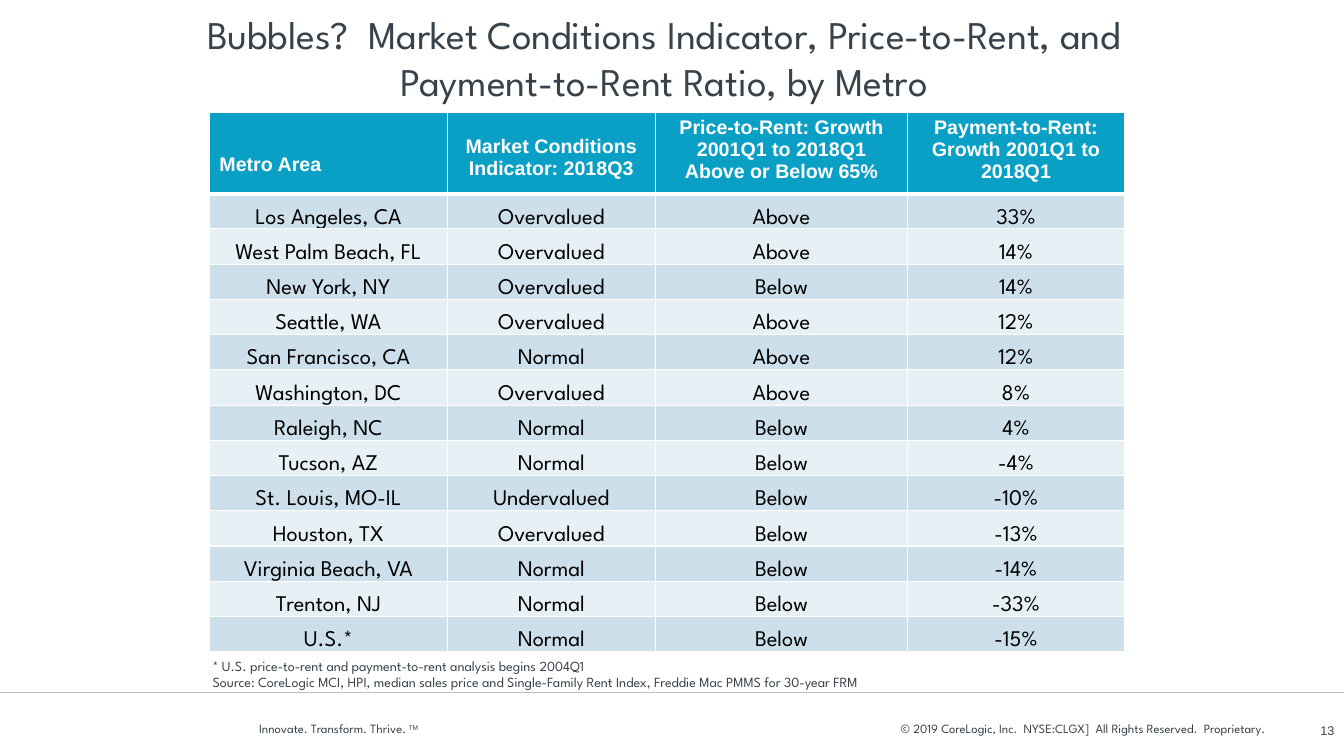
from pptx import Presentation
from pptx.util import Cm, Pt
from pptx.dml.color import RGBColor
from pptx.enum.text import PP_ALIGN, MSO_ANCHOR
from pptx.oxml.ns import qn
from lxml.etree import SubElement

HUES = {"ink": "38424A", "white": "FFFFFF", "black": "000000", "head": "0AA0C6",
        "odd": "CCDFEA", "even": "E7F0F5", "rule": "BFBFBF"}
SPARTAN = "League Spartan"
COLS = [5.99, 5.25, 6.35, 5.47]
HEAD = 2.06
LINE = 0.46
TITLES = [("Metro Area", 2), ("Market Conditions Indicator: 2018Q3", 1),
          ("Price-to-Rent: Growth 2001Q1 to 2018Q1 Above or Below 65%", 0),
          ("Payment-to-Rent: Growth 2001Q1 to 2018Q1", 0)]
METROS = [
    ("Los Angeles, CA", "Overvalued", "Above", "33%"),
    ("West Palm Beach, FL", "Overvalued", "Above", "14%"),
    ("New York, NY", "Overvalued", "Below", "14%"),
    ("Seattle, WA", "Overvalued", "Above", "12%"),
    ("San Francisco, CA", "Normal", "Above", "12%"),
    ("Washington, DC", "Overvalued", "Above", "8%"),
    ("Raleigh, NC", "Normal", "Below", "4%"),
    ("Tucson, AZ", "Normal", "Below", "-4%"),
    ("St. Louis, MO-IL", "Undervalued", "Below", "-10%"),
    ("Houston, TX", "Overvalued", "Below", "-13%"),
    ("Virginia Beach, VA", "Normal", "Below", "-14%"),
    ("Trenton, NJ", "Normal", "Below", "-33%"),
    ("U.S.*", "Normal", "Below", "-15%"),
]


def color(name):
    return RGBColor.from_string(HUES[name])


def apply(item, values):
    for key, value in values.items():
        setattr(item, key, value)


def margins(left, top, right, bottom):
    sides = {"left": left, "top": top, "right": right, "bottom": bottom}
    return {f"margin_{side}": Cm(size) for side, size in sides.items()}


def write(para, text, size, hue="ink", face=SPARTAN, bold=False, align=PP_ALIGN.LEFT):
    para.alignment = align
    run = para.add_run()
    run.text = text
    apply(run.font, {"size": Pt(size), "name": face, "bold": bold})
    run.font.color.rgb = color(hue)
    return run


def label(slide, box, lines, size, inset, anchor=MSO_ANCHOR.MIDDLE, **style):
    frame = slide.shapes.add_textbox(*map(Cm, box)).text_frame
    apply(frame, {"word_wrap": True, "vertical_anchor": anchor, **margins(*inset)})
    for n, text in enumerate(lines):
        para = frame.add_paragraph() if n else frame.paragraphs[0]
        write(para, text, size, **style)
    return frame


def border(cell, widths):
    props = cell._tc.get_or_add_tcPr()
    for side, width in zip("LRTB", widths):
        line = SubElement(props, qn(f"a:ln{side}"), w=str(Pt(width)))
        fill = SubElement(line, qn("a:solidFill"))
        SubElement(fill, qn("a:srgbClr"), val=HUES["white"])


def paint(cell, hue, widths, values):
    border(cell, widths)
    cell.fill.solid()
    cell.fill.fore_color.rgb = color(hue)
    apply(cell, values)


def grid(slide, box):
    table = slide.shapes.add_table(len(METROS) + 1, len(COLS), *map(Cm, box)).table
    for col, width in zip(table.columns, COLS):
        col.width = Cm(width)
    for row in table.rows:
        row.height = Cm((box[3] - HEAD) / len(METROS))
    table.rows[0].height = Cm(HEAD)
    for n, (text, skip) in enumerate(TITLES):
        cell = table.cell(0, n)
        paint(cell, "head", (1, 1, 1, 3), {
            "vertical_anchor": MSO_ANCHOR.TOP,
            **margins(0.25, 0.13 + skip * LINE, 0.25, 0.13)})
        write(cell.text_frame.paragraphs[0], text, 14, "white", "Arial", True,
              PP_ALIGN.CENTER if n else PP_ALIGN.LEFT)
    for r, metro in enumerate(METROS, 1):
        for c, text in enumerate(metro):
            cell = table.cell(r, c)
            paint(cell, "odd" if r % 2 else "even", (1, 1, 3 if r == 1 else 1, 1), {
                "vertical_anchor": MSO_ANCHOR.BOTTOM,
                **margins(0.02, 0.02, 0.02, 0)})
            write(cell.text_frame.paragraphs[0], text, 16, "black",
                  align=PP_ALIGN.CENTER)


def footer(slide, box):
    left, top, width, height = box
    rule = slide.shapes.add_connector(1, Cm(left), Cm(top), Cm(left + width), Cm(top))
    rule.line.color.rgb = color("rule")
    rule.line.width = Pt(0.75)
    SubElement(rule._element.spPr, qn("a:effectLst"))
    base, tall = top + 0.38, 1.07
    slim = (0, 0.13, 0, 0.13)
    label(slide, (left + 17.02, base, 14.86, tall),
          ["© 2019 CoreLogic, Inc.  NYSE:CLGX]  All Rights Reserved.  Proprietary."],
          9, slim, align=PP_ALIGN.RIGHT)
    motto = label(slide, (left + 6.53, base, 6.65, tall),
                  ["Innovate. Transform. Thrive. "], 9, slim)
    mark = write(motto.paragraphs[0], "TM", 9)
    mark._r.get_or_add_rPr().set("baseline", "30000")
    label(slide, (left + width - 1.41, base + 0.05, 1.42, tall), ["13"], 9,
          (0.25, 0.13, 0.25, 0.13), face="Arial", align=PP_ALIGN.RIGHT)


def main():
    deck = Presentation()
    apply(deck, {"slide_width": Cm(33.87), "slide_height": Cm(19.05)})
    slide = deck.slides.add_slide(deck.slide_layouts[6])
    footer(slide, (0, 17.45, 33.87, 1.6))
    grid(slide, (5.28, 2.82, sum(COLS), 13.61))
    label(slide, (4.67, 0.23, 24.13, 2.54),
          ["Bubbles?  Market Conditions Indicator, Price-to-Rent, and "
           "Payment-to-Rent Ratio, by Metro"],
          28, (0.13,) * 4, MSO_ANCHOR.BOTTOM, align=PP_ALIGN.CENTER)
    label(slide, (5.11, 16.43, 20.32, 1.12),
          ["* U.S. price-to-rent and payment-to-rent analysis begins 2004Q1",
           "Source: CoreLogic MCI, HPI, median sales price and Single-Family Rent "
           "Index, Freddie Mac PMMS for 30-year FRM"],
          10, (0.25, 0.13, 0.25, 0.13), MSO_ANCHOR.TOP)
    deck.save("out.pptx")


if __name__ == "__main__":
    main()
